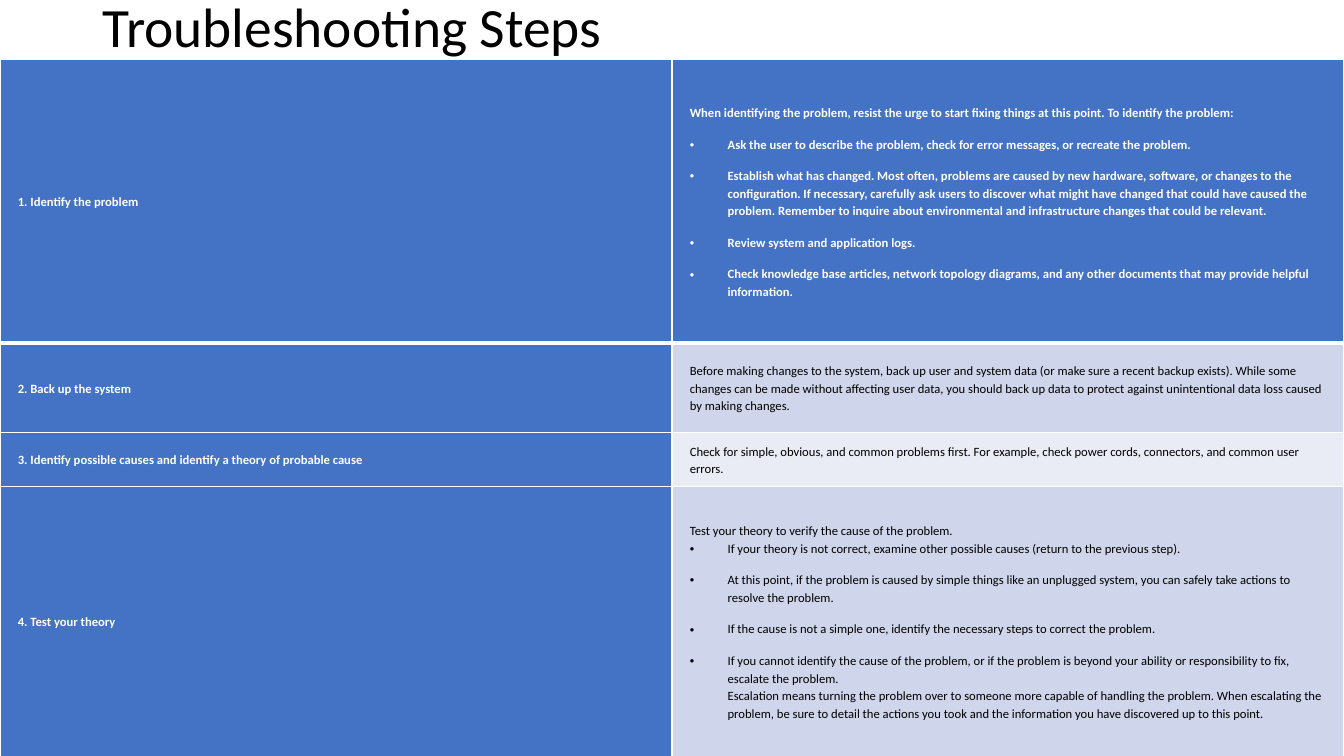
"""Build the troubleshooting steps slide."""
from dataclasses import dataclass

from lxml import etree
from pptx import Presentation
from pptx.dml.color import RGBColor
from pptx.enum.text import MSO_ANCHOR, MSO_AUTO_SIZE, PP_ALIGN
from pptx.oxml.ns import qn
from pptx.util import Pt

MIDDLE = MSO_ANCHOR.MIDDLE
NO_FIT = MSO_AUTO_SIZE.NONE
LEFT = PP_ALIGN.LEFT
PX = 9525
FONT = "Calibri"
SIZE = 9
COLORS = {"blue": "4472C4", "band": "CFD5EA", "pale": "E9EBF5",
          "white": "FFFFFF", "black": "000000"}
INSETS = {"margin_left": 17, "margin_right": 17,
          "margin_top": 9, "margin_bottom": 9}


@dataclass
class Step:
    """One row of the table."""
    name: str
    lead: str
    items: tuple[str, ...]
    high: int
    fill: str


STEPS = [
    Step("1. Identify the problem",
         "When identifying the problem, resist the urge to start fixing things at this point. "
         "To identify the problem:",
         ("Ask the user to describe the problem, check for error messages, or recreate the problem.",
          "Establish what has changed. Most often, problems are caused by new hardware, software, "
          "or changes to the configuration. If necessary, carefully ask users to discover what might "
          "have changed that could have caused the problem. Remember to inquire about environmental "
          "and infrastructure changes that could be relevant.",
          "Review system and application logs.",
          "Check knowledge base articles, network topology diagrams, and any other documents that "
          "may provide helpful information."),
         270, "blue"),
    Step("2. Back up the system",
         "Before making changes to the system, back up user and system data (or make sure a recent "
         "backup exists). While some changes can be made without affecting user data, you should "
         "back up data to protect against unintentional data loss caused by making changes.",
         (), 85, "band"),
    Step("3. Identify possible causes and identify a theory of probable cause",
         "Check for simple, obvious, and common problems first. For example, check power cords, "
         "connectors, and common user errors.",
         (), 51, "pale"),
    Step("4. Test your theory",
         "Test your theory to verify the cause of the problem.",
         ("If your theory is not correct, examine other possible causes (return to the previous step).",
          "At this point, if the problem is caused by simple things like an unplugged system, you can "
          "safely take actions to resolve the problem.",
          "If the cause is not a simple one, identify the necessary steps to correct the problem.",
          "If you cannot identify the cause of the problem, or if the problem is beyond your ability "
          "or responsibility to fix, escalate the problem.\n"
          "Escalation means turning the problem over to someone more capable of handling the problem. "
          "When escalating the problem, be sure to detail the actions you took and the information "
          "you have discovered up to this point."),
         257, "band"),
]


def apply(target, values: dict) -> None:
    """Set each named attribute on the target."""
    for key, value in values.items():
        setattr(target, key, value)


def style(font, size: float, color: str, bold: bool) -> None:
    """Format a font."""
    apply(font, {"name": FONT, "size": Pt(size), "bold": bold})
    font.color.rgb = RGBColor.from_string(COLORS[color])


def write(para, text: str, color: str, bold: bool, space: dict) -> None:
    """Fill a paragraph, with a line break at each newline."""
    apply(para, {"text": text, "alignment": LEFT, "line_spacing": 1.15, **space})
    for run in para.runs:
        style(run.font, SIZE, color, bold)
    for stop in para._p.findall(qn("a:br")):
        etree.SubElement(stop, qn("a:rPr"), sz=str(SIZE * 100))


def bullet(para) -> None:
    """Add a hanging bullet and a tab stop."""
    props = para._p.get_or_add_pPr()
    props.set("marL", str(36 * PX))
    props.set("indent", str(-36 * PX))
    etree.SubElement(props, qn("a:buFont"), typeface="Arial")
    etree.SubElement(props, qn("a:buChar"), char="•")
    tabs = etree.SubElement(props, qn("a:tabLst"))
    etree.SubElement(tabs, qn("a:tab"), pos=str(48 * PX), algn="l")


def border(cell, top: int, low: int) -> None:
    """Draw the white cell edges, widths in points."""
    props = cell._tc.get_or_add_tcPr()
    edges = {"lnL": 1, "lnR": 1, "lnT": top, "lnB": low}
    for spot, (tag, wide) in enumerate(edges.items()):
        line = etree.Element(qn(f"a:{tag}"), w=str(Pt(wide)))
        fill = etree.SubElement(line, qn("a:solidFill"))
        etree.SubElement(fill, qn("a:srgbClr"), val=COLORS["white"])
        props.insert(spot, line)


def paint(cell, fill: str, row: int) -> None:
    """Set the fill, insets and edges of a cell."""
    cell.fill.solid()
    cell.fill.fore_color.rgb = RGBColor.from_string(COLORS[fill])
    cell.vertical_anchor = MIDDLE
    apply(cell, {key: size * PX for key, size in INSETS.items()})
    border(cell, 3 if row == 1 else 1, 3 if row == 0 else 1)


def fill_row(table, row: int, step: Step) -> None:
    """Write one step into its row."""
    table.rows[row].height = step.high * PX
    name, body = table.cell(row, 0), table.cell(row, 1)
    paint(name, "blue", row)
    paint(body, step.fill, row)
    head = row == 0
    color = "white" if head else "black"
    edge = Pt(3.8 if head else 0)
    write(name.text_frame.paragraphs[0], step.name, "white", True,
          {"space_before": edge, "space_after": edge})
    frame = body.text_frame
    write(frame.paragraphs[0], step.lead, color, head,
          {"space_after": Pt(10 if head else 0)})
    for item in step.items:
        para = frame.add_paragraph()
        write(para, item, color, head, {"space_after": Pt(10)})
        bullet(para)


def add_title(slide) -> None:
    """Place and format the title."""
    title = slide.shapes.title
    apply(title, {"left": 88 * PX, "top": 0, "width": 1104 * PX, "height": 57 * PX})
    frame = title.text_frame
    apply(frame, {"text": "Troubleshooting Steps", "vertical_anchor": MIDDLE,
                  "auto_size": NO_FIT, "word_wrap": True})
    para = frame.paragraphs[0]
    apply(para, {"alignment": LEFT, "line_spacing": 0.9})
    style(para.runs[0].font, 39.6, "black", False)


def main() -> None:
    """Build and save the deck."""
    deck = Presentation()
    apply(deck, {"slide_width": 1280 * PX, "slide_height": 720 * PX})
    slide = deck.slides.add_slide(deck.slide_layouts[5])
    add_title(slide)
    table = slide.shapes.add_table(len(STEPS), 2, 0, 57 * PX, 1280 * PX, 663 * PX).table
    apply(table, {"first_row": False, "horz_banding": False})
    for row, step in enumerate(STEPS):
        fill_row(table, row, step)
    deck.save("out.pptx")


if __name__ == "__main__":
    main()
